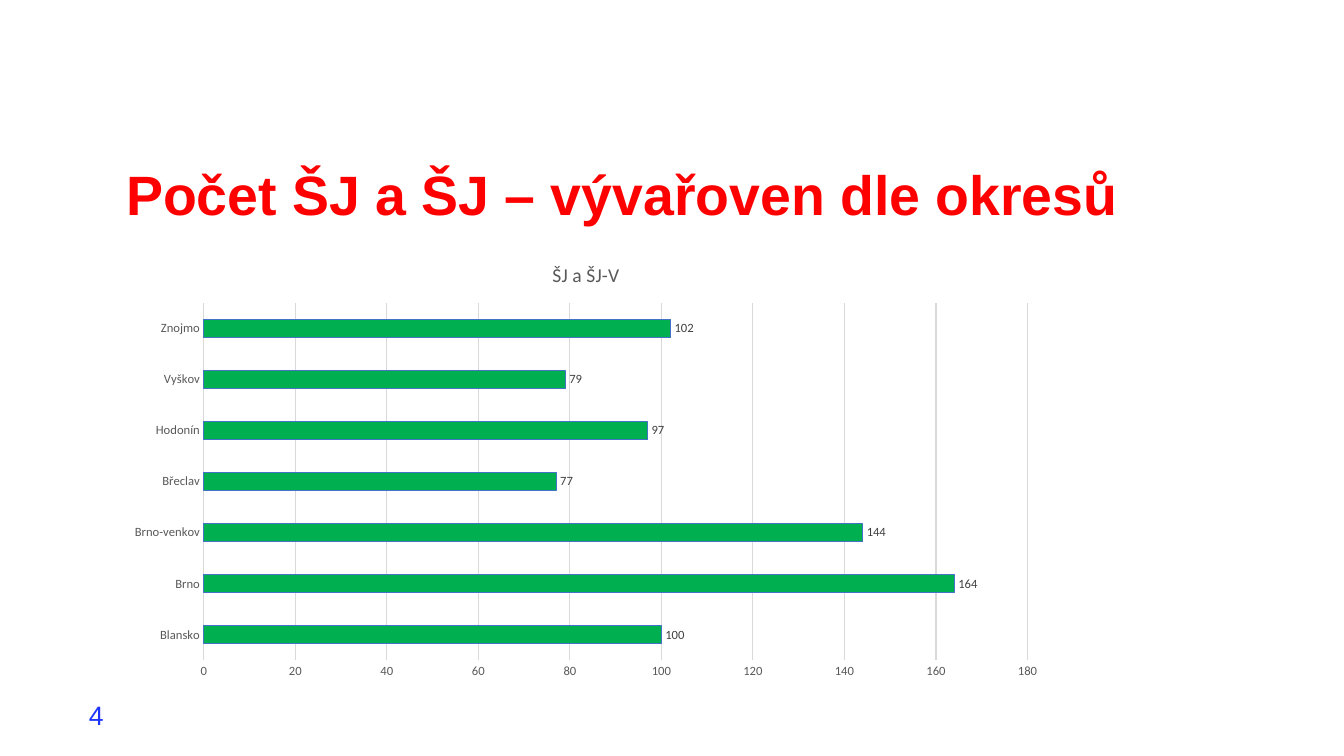
from pptx import Presentation
from pptx import util as u
from pptx.chart import data
from pptx.dml.color import RGBColor
from pptx.enum import chart as ch
from pptx.enum import text

RED = RGBColor(0xFF, 0x00, 0x00)
BLUE = RGBColor(0x1D, 0x34, 0xFD)
GREEN = RGBColor(0x00, 0xB0, 0x50)
OUTLINE = RGBColor(0x44, 0x72, 0xC4)
GREY = RGBColor(0x59, 0x59, 0x59)
DARK = RGBColor(0x40, 0x40, 0x40)
BLACK = RGBColor(0x00, 0x00, 0x00)
GRID = RGBColor(0xD9, 0xD9, 0xD9)

DISTRICTS = {
    "Blansko": 100,
    "Brno": 164,
    "Brno-venkov": 144,
    "Břeclav": 77,
    "Hodonín": 97,
    "Vyškov": 79,
    "Znojmo": 102,
}


class SlideBuilder:
    """Holds the text and chart style and adds elements to the current slide."""

    PX = 914400 / 100.8
    TEXT_FONT = "Arial"
    CHART_FONT = "Calibri"
    LINE_WIDTH = u.Pt(0.75)

    def __init__(self, deck):
        deck.slide_width, deck.slide_height = self.px(1344, 756)
        self.page = deck.slides.add_slide(deck.slide_layouts[5])

    def px(self, *lengths):
        return [u.Emu(round(length * self.PX)) for length in lengths]

    def style_font(self, font, name, size, color, bold=False):
        font.name = name
        font.size = u.Pt(size)
        font.color.rgb = color
        font.bold = bold

    def style_line(self, line, color):
        line.color.rgb = color
        line.width = self.LINE_WIDTH

    def add_words(self, box, words, size, color, bold=False, after=0):
        frame = box.text_frame
        frame.word_wrap = True
        frame.auto_size = text.MSO_AUTO_SIZE.NONE
        frame.vertical_anchor = text.MSO_ANCHOR.MIDDLE
        para = frame.paragraphs[0]
        para.alignment = text.PP_ALIGN.LEFT
        para.line_spacing = 0.9
        para.space_before = u.Pt(0)
        para.space_after = u.Pt(after)
        span = para.add_run()
        span.text = words
        self.style_font(span.font, self.TEXT_FONT, size, color, bold)

    def title(self, words, left, top, width, height):
        box = self.page.shapes.title
        box.left, box.top, box.width, box.height = self.px(left, top, width, height)
        self.add_words(box, words, 39.6, RED, bold=True)

    def page_number(self, words, left, top, width, height):
        box = self.page.shapes.add_textbox(*self.px(left, top, width, height))
        self.add_words(box, words, 19, BLUE, after=6)

    def style_axis(self, axis):
        axis.major_tick_mark = ch.XL_TICK_MARK.NONE
        axis.minor_tick_mark = ch.XL_TICK_MARK.NONE
        self.style_font(axis.tick_labels.font, self.CHART_FONT, 9, GREY)

    def bar_chart(self, name, values, left, top, width, height):
        table = data.CategoryChartData()
        table.categories = list(values)
        table.add_series(name, list(values.values()))
        chart = self.page.shapes.add_chart(
            ch.XL_CHART_TYPE.BAR_CLUSTERED, *self.px(left, top, width, height), table
        ).chart
        self.style_font(chart.font, self.CHART_FONT, 10, BLACK)
        chart.has_legend = False

        chart.has_title = True
        span = chart.chart_title.text_frame.paragraphs[0].add_run()
        span.text = name
        self.style_font(span.font, self.CHART_FONT, 14, GREY)

        self.style_axis(chart.category_axis)
        self.style_line(chart.category_axis.format.line, GRID)
        scale = chart.value_axis
        self.style_axis(scale)
        scale.format.line.fill.background()
        scale.has_major_gridlines = True
        self.style_line(scale.major_gridlines.format.line, GRID)
        scale.minimum_scale, scale.maximum_scale, scale.major_unit = 0, 180, 20

        plot = chart.plots[0]
        plot.gap_width = 182
        plot.vary_by_categories = False
        bars = plot.series[0]
        bars.format.fill.solid()
        bars.format.fill.fore_color.rgb = GREEN
        self.style_line(bars.format.line, OUTLINE)
        labels = bars.data_labels
        labels.show_value = True
        labels.position = ch.XL_LABEL_POSITION.OUTSIDE_END
        self.style_font(labels.font, self.CHART_FONT, 9, DARK)


def main():
    deck = Presentation()
    slide = SlideBuilder(deck)
    slide.title("Počet ŠJ a ŠJ – vývařoven dle okresů", 116, 161, 1074, 74)
    slide.page_number("4", 79, 697, 302, 40)
    slide.bar_chart("ŠJ a ŠJ-V", DISTRICTS, 116, 244, 940, 444)
    deck.save("out.pptx")


if __name__ == "__main__":
    main()
